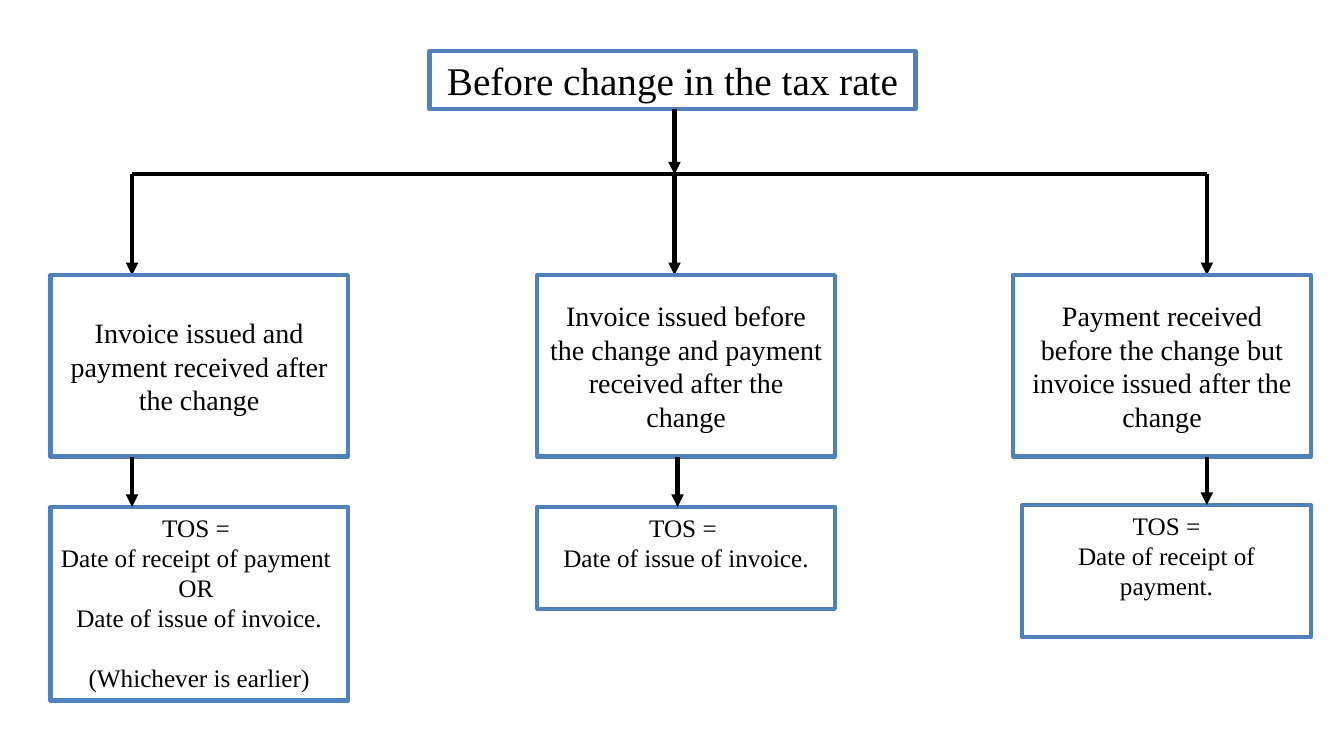
import pptx
import pptx.dml.color
import pptx.enum.shapes
import pptx.enum.text
import pptx.oxml.ns
import pptx.util
from lxml import etree

Inches = pptx.util.Inches
Pt = pptx.util.Pt
Anchor = pptx.enum.text.MSO_ANCHOR

FONT = "Times New Roman"
BLACK, WHITE, BLUE = "000000", "FFFFFF", "4F81BD"
LINE_WIDTH = 3
BRANCH_TOP, CASE_TOP, CASE_HEIGHT = 1.73, 2.73, 1.8
CASE_BOTTOM = CASE_TOP + CASE_HEIGHT
CASE_WIDTH = 2.95

BRANCHES = [
    {
        "left": 0.5,
        "arrows": (1.31, 1.31),
        "case": "Invoice issued and payment received after the change",
        "result_box": (0.5, 5.03, 2.95, 1.92),
        "result": ["TOS = ", "Date of receipt of payment ", "OR ",
                   "Date of issue of invoice.", "(Whichever is earlier)"],
    },
    {
        "left": 5.33,
        "arrows": (6.69, 6.72),
        "case": "Invoice issued before the change and payment received after the change",
        "result_box": (5.33, 5.03, 2.95, 1.01),
        "result": ["TOS = ", "Date of issue of invoice."],
    },
    {
        "left": 10.05,
        "arrows": (11.97, 11.97),
        "case": "Payment received before the change but invoice issued after the change",
        "result_box": (10.14, 5.01, 2.86, 1.31),
        "result": ["TOS =", "Date of receipt of payment."],
    },
]


def color(hex_string):
    return pptx.dml.color.RGBColor.from_string(hex_string)


def format_box(shape, box, lines, size, anchor):
    shape.left, shape.top, shape.width, shape.height = map(Inches, box)
    shape.fill.solid()
    shape.fill.fore_color.rgb = color(WHITE)
    shape.line.color.rgb = color(BLUE)
    shape.line.width = Pt(LINE_WIDTH)
    frame = shape.text_frame
    frame.word_wrap = True
    frame.auto_size = pptx.enum.text.MSO_AUTO_SIZE.NONE
    frame.vertical_anchor = anchor
    for index, line in enumerate(lines):
        paragraph = frame.paragraphs[0] if index == 0 else frame.add_paragraph()
        paragraph.alignment = pptx.enum.text.PP_ALIGN.CENTER
        paragraph.space_before = Pt(21 if line.startswith("(") else 0)
        run = paragraph.add_run()
        run.text = line
        run.font.name = FONT
        run.font.size = Pt(size)
        run.font.color.rgb = color(BLACK)


def add_box(slide, box, lines, size, anchor):
    shape = slide.shapes.add_shape(
        pptx.enum.shapes.MSO_SHAPE.RECTANGLE, *map(Inches, box))
    shape.shadow.inherit = False
    format_box(shape, box, lines, size, anchor)


def add_line(slide, start, end, arrow=True):
    connector = slide.shapes.add_connector(
        pptx.enum.shapes.MSO_CONNECTOR.STRAIGHT, *map(Inches, start + end))
    connector.line.color.rgb = color(BLACK)
    connector.line.width = Pt(LINE_WIDTH)
    qualified = pptx.oxml.ns.qn
    if arrow:
        etree.SubElement(connector.line._get_or_add_ln(),
                         qualified("a:tailEnd"), type="triangle")
    etree.SubElement(connector._element.spPr, qualified("a:effectLst"))


def add_heading(slide, box):
    left, top, width, height = box
    format_box(slide.shapes.title, box, ["Before change in the tax rate"], 28, Anchor.MIDDLE)
    center = BRANCHES[1]["arrows"][0]
    add_line(slide, (center, top + height), (center, BRANCH_TOP))
    add_line(slide, (BRANCHES[0]["arrows"][0], BRANCH_TOP),
             (BRANCHES[-1]["arrows"][0], BRANCH_TOP), arrow=False)


def add_branch(slide, branch):
    upper, lower = branch["arrows"]
    result_box = branch["result_box"]
    add_line(slide, (upper, BRANCH_TOP), (upper, CASE_TOP))
    add_box(slide, (branch["left"], CASE_TOP, CASE_WIDTH, CASE_HEIGHT),
            [branch["case"]], 20, Anchor.MIDDLE)
    add_box(slide, result_box, branch["result"], 18, Anchor.TOP)
    add_line(slide, (lower, CASE_BOTTOM), (lower, result_box[1]))


def main():
    presentation = pptx.Presentation()
    presentation.slide_width = Inches(13.33)
    presentation.slide_height = Inches(7.5)
    slide = presentation.slides.add_slide(presentation.slide_layouts[5])
    add_heading(slide, (4.26, 0.51, 4.82, 0.57))
    for branch in BRANCHES:
        add_branch(slide, branch)
    presentation.save("out.pptx")


if __name__ == "__main__":
    main()
